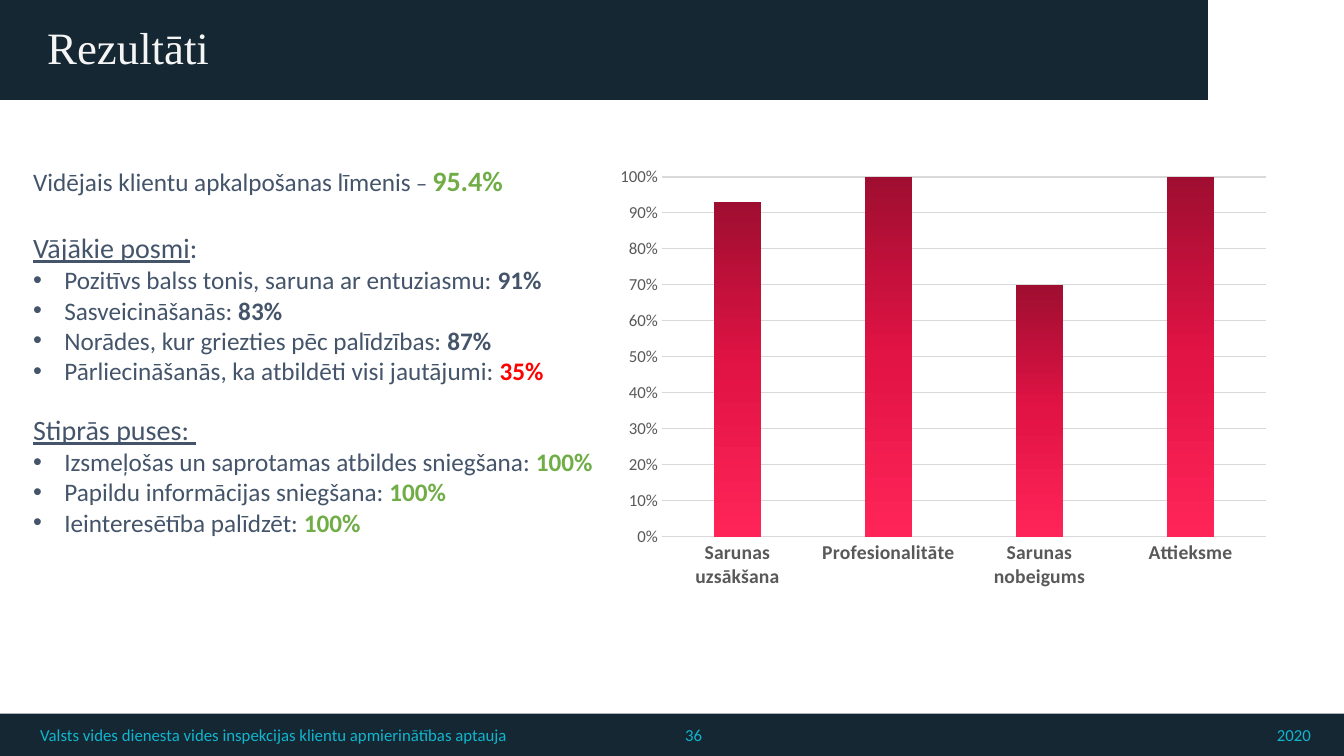
from lxml import etree
from pptx import Presentation, util as u
from pptx.chart.data import CategoryChartData
from pptx.dml.color import RGBColor
from pptx.enum import chart as ch, shapes, text
from pptx.oxml import parse_xml
from pptx.oxml.ns import qn, nsdecls

NAVY = RGBColor(0x06, 0x1A, 0x26)
TEAL = RGBColor(0x11, 0xB5, 0xCE)
SLATE = RGBColor(0x44, 0x54, 0x6A)
GREEN = RGBColor(0x70, 0xAD, 0x47)
RED = RGBColor(0xFF, 0, 0)
PALE = RGBColor(0xF5, 0xF5, 0xF5)
GREY = RGBColor(0x59, 0x59, 0x59)
RULE = RGBColor(0xD9, 0xD9, 0xD9)
SHADES = [(0, "9F0E30"), (50, "E21345"), (100, "FF2458")]
SANS, SERIF = "Calibri", "Times New Roman"

# Content
TITLE = "Rezultāti"
AVERAGE = ("Vidējais klientu apkalpošanas līmenis", " – ", "95.4%")
# heading, its plain tail, space before, points
GROUPS = [
    ("Vājākie posmi", ":", 24.4, [
        ("Pozitīvs balss tonis, saruna ar entuziasmu: ", "91%", SLATE),
        ("Sasveicināšanās: ", "83%", SLATE),
        ("Norādes, kur griezties pēc palīdzības: ", "87%", SLATE),
        ("Pārliecināšanās, ka atbildēti visi jautājumi: ", "35%", RED)]),
    ("Stiprās puses: ", "", 19.5, [
        ("Izsmeļošas un saprotamas atbildes sniegšana: ", "100%", GREEN),
        ("Papildu informācijas sniegšana: ", "100%", GREEN),
        ("Ieinteresētība palīdzēt: ", "100%", GREEN)]),
]
SCORES = {"Sarunas uzsākšana": 0.93, "Profesionalitāte": 1,
          "Sarunas nobeigums": 0.7, "Attieksme": 1}
# text, left, width, alignment
FOOTER = [
    ("Valsts vides dienesta vides inspekcijas klientu apmierinātības aptauja",
     0.3, 6.33, text.PP_ALIGN.LEFT),
    ("36", 5.54, 2.68, text.PP_ALIGN.CENTER),
    ("2020", 10.42, 2.68, text.PP_ALIGN.RIGHT),
]

# Layout in inches
W, H = 13.33, 7.5
HEAD, FOOT = 0.99, 0.42
HEAD_W = 11.98
TOP, SPLIT = 1.57, 6.02
INDENT = 0.31

deck = Presentation()
deck.slide_width, deck.slide_height = u.Inches(W), u.Inches(H)
slide = deck.slides.add_slide(deck.slide_layouts[6])


def place(*box):
    return [u.Inches(n) for n in box]


def band(*box):
    bar = slide.shapes.add_shape(shapes.MSO_SHAPE.RECTANGLE, *place(*box))
    bar.shadow.inherit = False
    bar.fill.solid()
    bar.fill.fore_color.rgb = NAVY
    bar.line.fill.background()
    tint = bar.fill._xPr.find(".//" + qn("a:srgbClr"))
    etree.SubElement(tint, qn("a:alpha")).set("val", "94000")


def frame(*box, anchor=text.MSO_ANCHOR.MIDDLE):
    body = slide.shapes.add_textbox(*place(*box)).text_frame
    body.word_wrap = True
    body.vertical_anchor = anchor
    return body


def style(font, size, color, face=SANS, bold=False):
    font.name, font.size, font.bold = face, u.Pt(size), bold
    font.color.rgb = color


def add(para, words, size, color, bold=False):
    run = para.add_run()
    run.text = words
    style(run.font, size, color, bold=bold)
    return run


def bullet(para):
    props = para._p.get_or_add_pPr()
    props.set("marL", str(u.Inches(INDENT)))
    props.set("indent", str(-u.Inches(INDENT)))
    etree.SubElement(props, qn("a:buFont")).set("typeface", "Arial")
    etree.SubElement(props, qn("a:buChar")).set("char", "•")


# Footer
band(0, H - FOOT, W, FOOT)
for words, left, width, align in FOOTER:
    para = frame(left, H - FOOT, width, FOOT).paragraphs[0]
    para.alignment = align
    add(para, words, 12, TEAL)

# Title
band(0, 0, HEAD_W, HEAD)
para = frame(0.37, 0, HEAD_W - 0.37, HEAD).paragraphs[0]
para.text = TITLE
para.line_spacing = 0.9
style(para.runs[0].font, 32, PALE, SERIF)

# Findings
body = frame(0.23, TOP, SPLIT - 0.23, 3.84, anchor=text.MSO_ANCHOR.TOP)
lead, dash, score = AVERAGE
para = body.paragraphs[0]
add(para, lead, 18, SLATE)
add(para, dash, 16, SLATE)
add(para, score, 20, GREEN, True)
for name, tail, gap, points in GROUPS:
    para = body.add_paragraph()
    para.space_before = u.Pt(gap)
    add(para, name, 20, SLATE).font.underline = True
    if tail:
        add(para, tail, 20, SLATE)
    for label, score, color in points:
        para = body.add_paragraph()
        bullet(para)
        add(para, label, 18, SLATE)
        add(para, score, 18, color, True)

# Chart
data = CategoryChartData(number_format="0%")
data.categories = list(SCORES)
data.add_series("Series 1", list(SCORES.values()))
chart = slide.shapes.add_chart(ch.XL_CHART_TYPE.COLUMN_CLUSTERED,
                               *place(SPLIT, TOP, 6.67, 4.36), data).chart
chart.has_legend = chart.has_title = False
style(chart.font, 10, GREY)

cats, vals = chart.category_axis, chart.value_axis
for axis, size, bold in ((cats, 14, True), (vals, 12, False)):
    axis.major_tick_mark = axis.minor_tick_mark = ch.XL_TICK_MARK.NONE
    style(axis.tick_labels.font, size, GREY, bold=bold)
vals.minimum_scale, vals.maximum_scale, vals.major_unit = 0, 1, 0.1
vals.tick_labels.number_format = "0%"
vals.tick_labels.number_format_is_linked = False
vals.format.line.fill.background()
for line in (cats.format.line, vals.major_gridlines.format.line):
    line.color.rgb = RULE
    line.width = u.Pt(0.75)

plot = chart.plots[0]
plot.vary_by_categories = False
plot.gap_width, plot.overlap = 219, -27
stops = "".join(f'<a:gs pos="{pos * 1000}"><a:srgbClr val="{shade}"/></a:gs>'
                for pos, shade in SHADES)
props = plot.series[0].format.fill._xPr
props.insert(0, parse_xml(
    f'<a:gradFill {nsdecls("a")} rotWithShape="1"><a:gsLst>{stops}</a:gsLst>'
    '<a:lin ang="5400000" scaled="0"/></a:gradFill>'))

deck.save("out.pptx")
